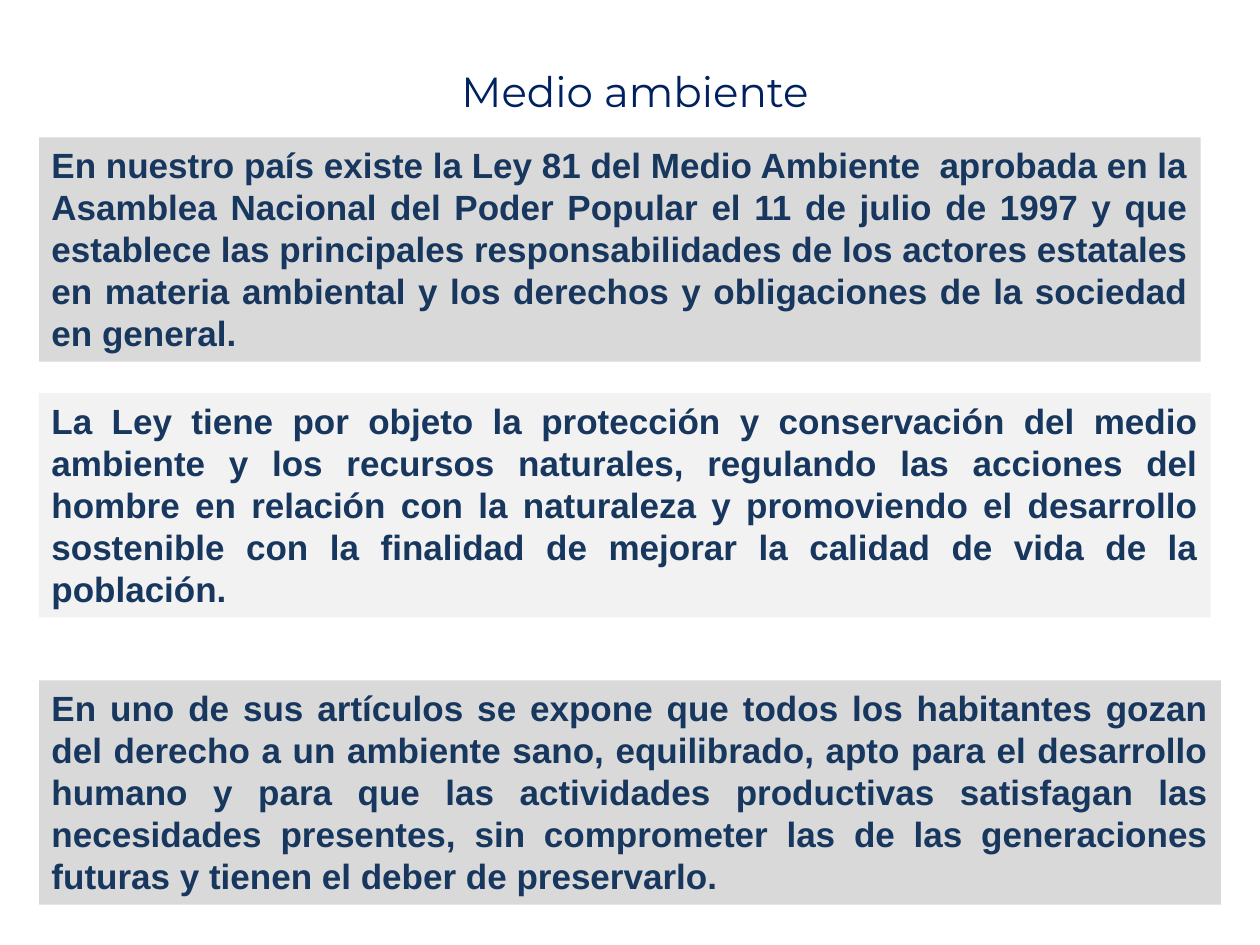
"""Build the slide on the environment law."""
from lxml.etree import SubElement
from pptx import Presentation
from pptx.dml.color import RGBColor
from pptx.enum.shapes import MSO_SHAPE
from pptx.enum.text import MSO_ANCHOR, MSO_AUTO_SIZE, PP_ALIGN
from pptx.oxml.ns import qn
from pptx.util import Emu, Pt

PX = 9144
HUES = {"navy": "002060", "ink": "17375E", "edge": "D8D8D8",
        "gray": "D9D9D9", "pale": "F2F2F2"}
LAWS = [
    (109, 922, "gray", "En nuestro país existe la Ley 81 del Medio Ambiente  aprobada en la "
     "Asamblea Nacional del Poder Popular el 11 de julio de 1997 y que establece las "
     "principales responsabilidades de los actores estatales en materia ambiental y los "
     "derechos y obligaciones de la sociedad en general."),
    (312, 930, "pale", "La Ley tiene por objeto la protección y conservación del medio ambiente "
     "y los recursos naturales, regulando las acciones del hombre en relación con la "
     "naturaleza y promoviendo el desarrollo sostenible con la finalidad de mejorar la "
     "calidad de vida de la población."),
    (540, 938, "gray", "En uno de sus artículos se expone que todos los habitantes gozan del "
     "derecho a un ambiente sano, equilibrado, apto para el desarrollo humano y para que las "
     "actividades productivas satisfagan las necesidades presentes, sin comprometer las de "
     "las generaciones futuras y tienen el deber de preservarlo."),
]


class Deck:
    def __init__(self):
        self.prs = Presentation()
        self.prs.slide_width, self.prs.slide_height = Emu(1000 * PX), Emu(750 * PX)
        self.slide = self.prs.slides.add_slide(self.prs.slide_layouts[5])

    def hue(self, name):
        return RGBColor.from_string(HUES[name])

    def text(self, frame, words, font, size, hue, align, bold=False):
        para = frame.paragraphs[0]
        para.alignment = align
        run = para.add_run()
        run.text = words
        run.font.name, run.font.size, run.font.bold = font, Pt(size), bold
        run.font.color.rgb = self.hue(hue)
        return run

    def title(self, words, *box):
        shape = self.slide.shapes.title
        shape.left, shape.top, shape.width, shape.height = [Emu(n * PX) for n in box]
        frame = shape.text_frame
        frame.word_wrap = False
        frame.auto_size = MSO_AUTO_SIZE.NONE
        frame.vertical_anchor = MSO_ANCHOR.TOP
        run = self.text(frame, words, "Montserrat", 24, "navy", PP_ALIGN.CENTER)
        props = run._r.get_or_add_rPr()
        line = SubElement(props, qn("a:ln"), w=str(Pt(0.75)))
        fill = SubElement(line, qn("a:solidFill"))
        SubElement(fill, qn("a:srgbClr"), val=HUES["edge"])
        props.insert(0, line)

    def panel(self, words, hue, *box):
        shape = self.slide.shapes.add_shape(MSO_SHAPE.RECTANGLE, *[Emu(n * PX) for n in box])
        shape.shadow.inherit = False
        shape.fill.solid()
        shape.fill.fore_color.rgb = self.hue(hue)
        shape.line.fill.background()
        frame = shape.text_frame
        frame.word_wrap = True
        frame.auto_size = MSO_AUTO_SIZE.SHAPE_TO_FIT_TEXT
        frame.vertical_anchor = MSO_ANCHOR.TOP
        self.text(frame, words, "Arial", 20, "ink", PP_ALIGN.JUSTIFY, True)


def main():
    deck = Deck()
    deck.title("Medio ambiente", 125, 47, 758, 86)
    for top, width, hue, words in LAWS:
        deck.panel(words, hue, 31, top, width, 178)
    deck.prs.save("out.pptx")


if __name__ == "__main__":
    main()
